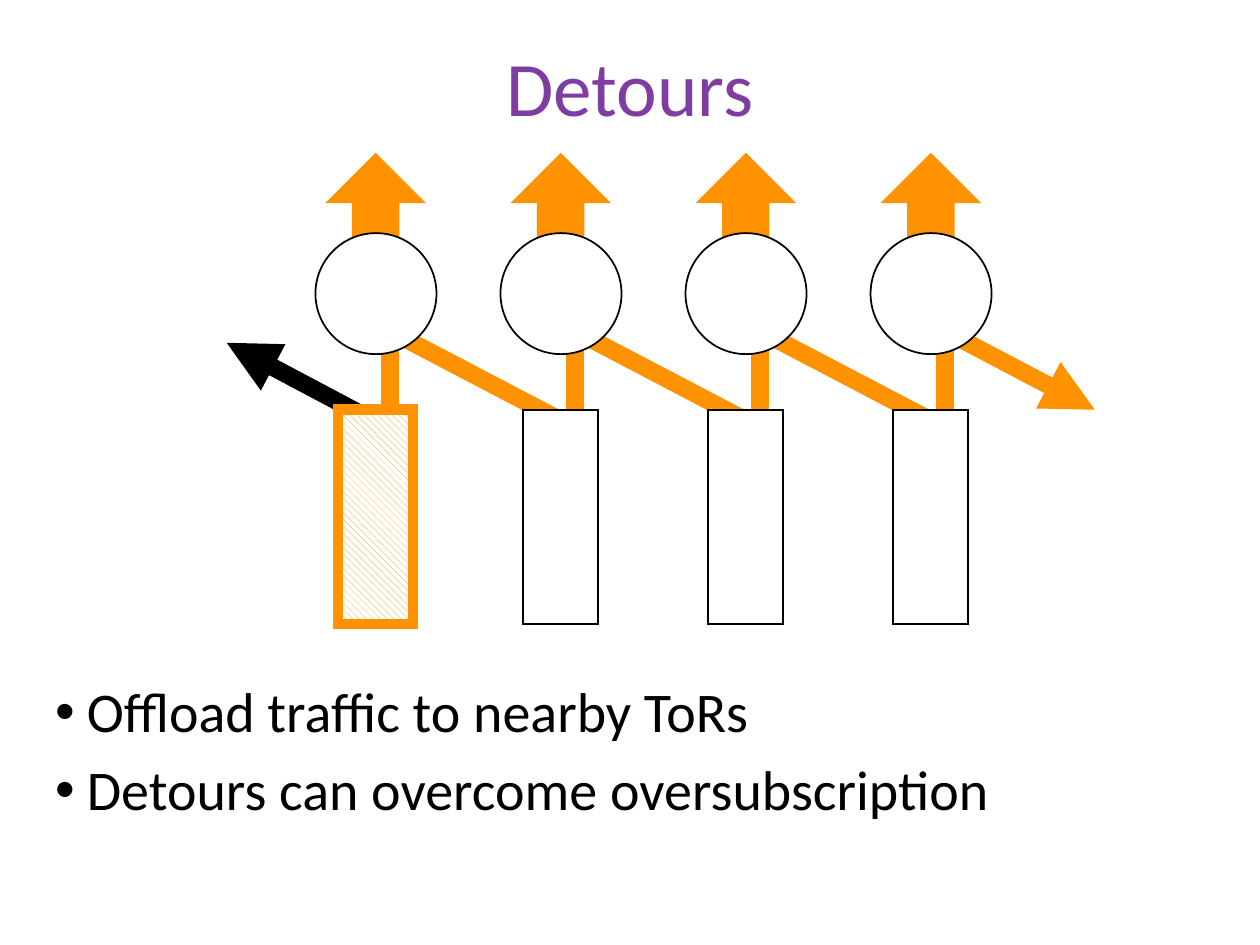
from lxml import etree
from pptx import Presentation
from pptx.dml.color import RGBColor
from pptx.enum import dml, shapes, text
from pptx.oxml.ns import qn
from pptx.util import Cm, Pt

ORANGE, BLACK, WHITE, PURPLE = "FF9200", "000000", "FFFFFF", "7F3CA2"
KIND = shapes.MSO_SHAPE
COUNT, LEFT, PITCH = 4, 6.36, 3.73
RACK_TOP = 8.26


def tint(code):
    return RGBColor.from_string(code)


def add_link(slide, start, end, color, arrow=False):
    link = slide.shapes.add_connector(
        shapes.MSO_CONNECTOR.STRAIGHT, *(Cm(v) for v in start + end))
    link.line.color.rgb = tint(color)
    link.line.width = Pt(10)
    props = link._element.spPr
    if arrow:
        etree.SubElement(props.find(qn("a:ln")), qn("a:tailEnd"), type="triangle")
    etree.SubElement(props, qn("a:effectLst"))


def add_node(slide, kind, box, fill=WHITE, edge=BLACK, width=1):
    """Add a filled shape with sharp outline corners."""
    node = slide.shapes.add_shape(kind, *(Cm(v) for v in box))
    node.shadow.inherit = False
    node.fill.solid()
    node.fill.fore_color.rgb = tint(fill)
    node.line.color.rgb = tint(edge)
    node.line.width = Pt(width)
    etree.SubElement(node._element.spPr.find(qn("a:ln")), qn("a:miter"), lim="800000")
    return node


def hatch(node, front, back):
    node.fill.patterned()
    node.fill.pattern = dml.MSO_PATTERN.WIDE_DOWNWARD_DIAGONAL
    node.fill.fore_color.rgb = tint(front)
    node.fill.back_color.rgb = tint(back)


def add_text(slide, box, lines, size, color, bullet=False):
    frame = slide.shapes.add_textbox(*(Cm(v) for v in box)).text_frame
    frame.word_wrap = True
    frame.text = "\n".join(lines)
    for i, para in enumerate(frame.paragraphs):
        para.line_spacing = 0.9
        if i:
            para.space_before = Pt(10)
        if bullet:
            props = para._p.get_or_add_pPr()
            props.set("marL", str(Cm(0.64)))
            props.set("indent", str(Cm(-0.64)))
            etree.SubElement(props, qn("a:buFont"), typeface="Arial")
            etree.SubElement(props, qn("a:buChar"), char="•")
        para.font.size = Pt(size)
        para.font.name = "Calibri"
        para.font.color.rgb = tint(color)
    return frame


def main():
    deck = Presentation()
    deck.slide_width, deck.slide_height = Cm(25.4), Cm(19.05)
    slide = deck.slides.add_slide(deck.slide_layouts[6])
    cols = [LEFT + PITCH * i for i in range(COUNT)]

    for x in cols:
        add_node(slide, KIND.UP_ARROW, (x + 0.54, 3.28, 1.35, 1.65), ORANGE, ORANGE, 8)

    add_link(slide, (7.87, 8.66), (4.57, 6.91), BLACK, arrow=True)
    for x in cols:
        last = x == cols[-1]
        end = (x + 4.52, RACK_TOP) if last else (x + 5.3, 8.66)
        add_link(slide, (x + 1.08, 6.45), end, ORANGE, arrow=last)
        add_link(slide, (x + 1.5, 8.64), (x + 1.5, 6.64), ORANGE)

    for x in cols:
        add_node(slide, KIND.OVAL, (x, 4.7, 2.44, 2.44))
        rack = add_node(slide, KIND.RECTANGLE, (x + 0.45, RACK_TOP, 1.52, 4.32))
        if x == LEFT:
            hatch(rack, ORANGE, WHITE)
            rack.line.color.rgb = tint(ORANGE)
            rack.line.width = Pt(6)

    title = add_text(slide, (1.75, 0, 21.9, 3.68), ["Detours"], 44, PURPLE)
    title.vertical_anchor = text.MSO_ANCHOR.MIDDLE
    title.paragraphs[0].alignment = text.PP_ALIGN.CENTER
    add_text(slide, (0.86, 13.67, 23.65, 4.83),
             ["Offload traffic to nearby ToRs", "Detours can overcome oversubscription"],
             32, BLACK, bullet=True)
    deck.save("out.pptx")


if __name__ == "__main__":
    main()
